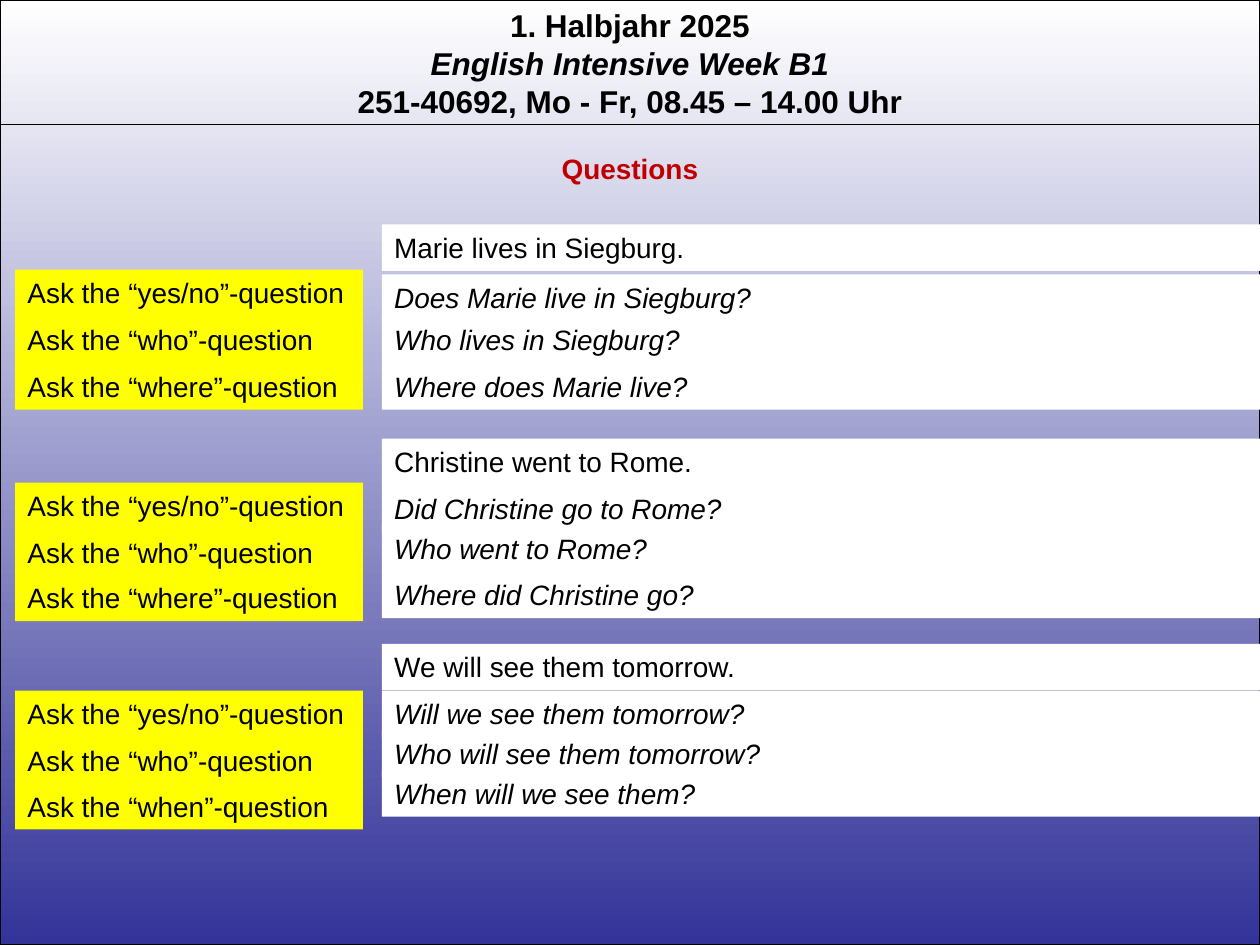
from lxml.etree import SubElement
from pptx import Presentation
from pptx.dml.color import RGBColor
from pptx.enum.shapes import MSO_CONNECTOR, MSO_SHAPE
from pptx.enum.text import MSO_ANCHOR, MSO_AUTO_SIZE, PP_ALIGN
from pptx.oxml.ns import qn
from pptx.util import Pt

COLORS = {
    "black": "000000",
    "white": "FFFFFF",
    "blue": "333399",
    "yellow": "FFFF00",
    "red": "C00000",
}
FONT = "Arial"
SLIDE_WIDTH, SLIDE_HEIGHT = 720, 540
ROW_HEIGHT = 26.64
PROMPT_LEFT, PROMPT_WIDTH = 8.64, 198.7
ANSWER_LEFT = 218.2
ANSWER_WIDTH = SLIDE_WIDTH - ANSWER_LEFT

HEADER = [
    ("1. Halbjahr 2025", False),
    ("English Intensive Week B1", True),
    ("251-40692, Mo - Fr, 08.45 – 14.00 Uhr", False),
]

# Each exercise: statement with its top, then question word,
# prompt top, answer and answer top
EXERCISES = [
    ("Marie lives in Siegburg.", 128.2, [
        ("yes/no", 154.1, "Does Marie live in Siegburg?", 156.8),
        ("who", 180.7, "Who lives in Siegburg?", 180.7),
        ("where", 207.4, "Where does Marie live?", 207.4),
    ]),
    ("Christine went to Rome.", 250.6, [
        ("yes/no", 275.8, "Did Christine go to Rome?", 277.3),
        ("who", 302.4, "Who went to Rome?", 300.2),
        ("where", 328.3, "Where did Christine go?", 326.7),
    ]),
    ("We will see them tomorrow.", 367.9, [
        ("yes/no", 394.6, "Will we see them tomorrow?", 394.6),
        ("who", 421.2, "Who will see them tomorrow?", 417.5),
        ("when", 447.4, "When will we see them?", 440),
    ]),
]


def color(name):
    return RGBColor.from_string(COLORS[name])


def add_text(shape, lines, size=16, bold=False, font_color="black",
             alignment=PP_ALIGN.LEFT):
    """Fill a shape with one paragraph per (text, italic) pair."""
    frame = shape.text_frame
    frame.word_wrap = True
    frame.auto_size = MSO_AUTO_SIZE.SHAPE_TO_FIT_TEXT
    frame.vertical_anchor = MSO_ANCHOR.TOP
    for index, (text, italic) in enumerate(lines):
        paragraph = frame.add_paragraph() if index else frame.paragraphs[0]
        paragraph.alignment = alignment
        run = paragraph.add_run()
        run.text = text
        run.font.name = FONT
        run.font.size = Pt(size)
        run.font.bold = bold
        run.font.italic = italic
        run.font.color.rgb = color(font_color)


def add_rectangle(slide, left, top, width, height):
    shape = slide.shapes.add_shape(
        MSO_SHAPE.RECTANGLE, Pt(left), Pt(top), Pt(width), Pt(height))
    shape.shadow.inherit = False
    return shape


def add_background(slide):
    shape = add_rectangle(slide, 0, 0, SLIDE_WIDTH, SLIDE_HEIGHT)
    shape.fill.gradient()
    shape.fill.gradient_angle = 270
    for stop, name in zip(shape.fill.gradient_stops, ("white", "blue")):
        stop.color.rgb = color(name)
    shape.line.color.rgb = color("black")
    shape.line.width = Pt(0.75)


def add_centered_text(slide, top, height, lines, size, font_color):
    box = slide.shapes.add_textbox(
        Pt(0), Pt(top), Pt(SLIDE_WIDTH), Pt(height))
    add_text(box, lines, size, True, font_color, PP_ALIGN.CENTER)


def add_rule(slide, top):
    line = slide.shapes.add_connector(
        MSO_CONNECTOR.STRAIGHT, Pt(0), Pt(top), Pt(SLIDE_WIDTH), Pt(top))
    line.line.color.rgb = color("black")
    line.line.width = Pt(0.75)
    SubElement(line._element.spPr, qn("a:effectLst"))


def add_label(slide, left, top, width, text, fill, italic=False):
    shape = add_rectangle(slide, left, top, width, ROW_HEIGHT)
    shape.fill.solid()
    shape.fill.fore_color.rgb = color(fill)
    shape.line.fill.background()
    add_text(shape, [(text, italic)])


def add_exercise(slide, statement, statement_top, questions):
    add_label(slide, ANSWER_LEFT, statement_top, ANSWER_WIDTH,
              statement, "white")
    for word, prompt_top, answer, answer_top in questions:
        add_label(slide, PROMPT_LEFT, prompt_top, PROMPT_WIDTH,
                  f"Ask the “{word}”-question", "yellow")
        add_label(slide, ANSWER_LEFT, answer_top, ANSWER_WIDTH,
                  answer, "white", italic=True)


def main():
    presentation = Presentation()
    presentation.slide_width = Pt(SLIDE_WIDTH)
    presentation.slide_height = Pt(SLIDE_HEIGHT)
    slide = presentation.slides.add_slide(presentation.slide_layouts[6])

    # Background and course header
    add_background(slide)
    add_centered_text(slide, 0, 72.7, HEADER, 18, "black")
    add_rule(slide, 71.3)

    # Title and exercises
    add_centered_text(slide, 82.8, ROW_HEIGHT, [("Questions", False)],
                      16, "red")
    for exercise in EXERCISES:
        add_exercise(slide, *exercise)

    presentation.save("out.pptx")


if __name__ == "__main__":
    main()
